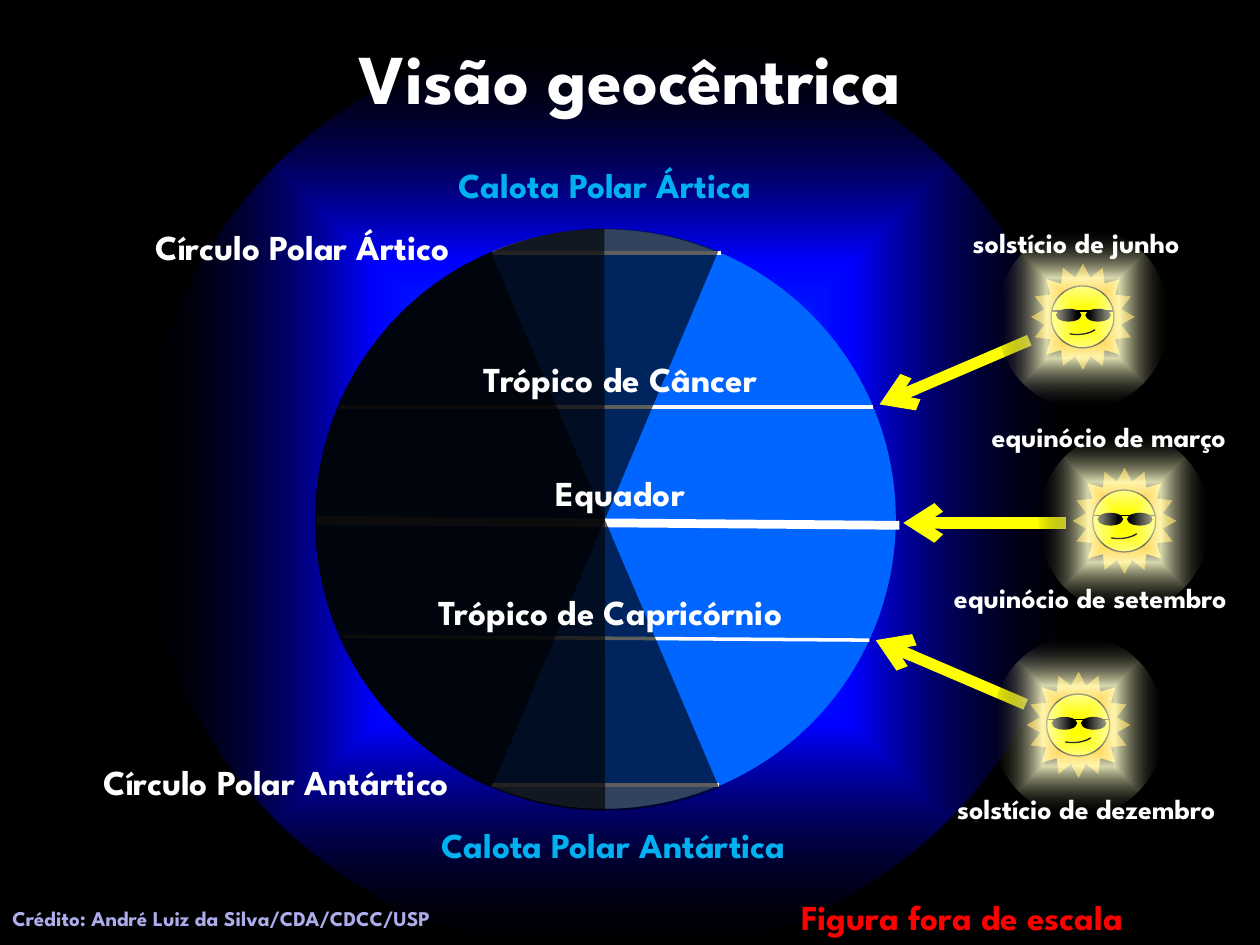
from dataclasses import dataclass
from typing import Any

import pptx
import pptx.dml.color
import pptx.enum.shapes
import pptx.enum.text
import pptx.oxml
import pptx.oxml.ns
import pptx.util
from lxml import etree

Pt = pptx.util.Pt
Kind = pptx.enum.shapes.MSO_SHAPE
Align = pptx.enum.text.PP_ALIGN
qn = pptx.oxml.ns.qn
WHITE, BLACK, BLUE, YELLOW = "FFFFFF", "000000", "0066FF", "FFFF00"
CYAN = "00B0F0"
FACE = "League Spartan"


@dataclass
class Label:
    text: str
    left: float
    top: float
    width: float
    size: int = 20
    tone: str = WHITE
    align: Any = Align.CENTER


@dataclass
class Form:
    kind: Any
    left: float
    top: float
    width: float
    height: float
    tone: str = ""
    alpha: int = 100
    stops: tuple = ()
    edge: float = 0
    turn: float = 0
    flip: bool = False
    bends: tuple = ()


@dataclass
class Stroke:
    start: tuple
    end: tuple
    width: float
    tone: str = WHITE
    head: bool = False


def color(tone: str) -> pptx.dml.color.RGBColor:
    return pptx.dml.color.RGBColor.from_string(tone)


def apply(target: Any, values: dict) -> None:
    for key, value in values.items():
        setattr(target, key, value)


def fade(node: Any, alpha: int) -> None:
    etree.SubElement(node, qn("a:alpha"), val=str(alpha * 1000))


def blend(shape: Any, stops: tuple) -> None:
    shape.fill.background()
    props = shape._element.spPr
    grad = etree.Element(qn("a:gradFill"), rotWithShape="1")
    group = etree.SubElement(grad, qn("a:gsLst"))
    for place, tone, alpha in stops:
        stop = etree.SubElement(group, qn("a:gs"), pos=str(place * 1000))
        fade(etree.SubElement(stop, qn("a:srgbClr"), val=str(color(tone))), alpha)
    route = etree.SubElement(grad, qn("a:path"), attrib={"path": "shape"})
    etree.SubElement(route, qn("a:fillToRect"), l="50000", t="50000", r="50000", b="50000")
    props.replace(props.find(qn("a:noFill")), grad)


def rim(shape: Any, width: float) -> None:
    if width:
        shape.line.color.rgb = color(BLACK)
        shape.line.width = Pt(width)
    else:
        shape.line.fill.background()


def draw(tree: Any, form: Form) -> None:
    box = map(Pt, (form.left, form.top, form.width, form.height))
    shape = tree.add_shape(form.kind, *box)
    shape.shadow.inherit = False
    shape.rotation = form.turn
    for spot, bend in enumerate(form.bends):
        shape.adjustments[spot] = bend
    if form.stops:
        blend(shape, form.stops)
    else:
        shape.fill.solid()
        shape.fill.fore_color.rgb = color(form.tone)
        if form.alpha < 100:
            fade(shape._element.spPr.find(qn("a:solidFill"))[0], form.alpha)
    rim(shape, form.edge)
    if form.flip:
        shape._element.spPr.xfrm.set("flipH", "1")


def rule(tree: Any, item: Stroke) -> None:
    ends = map(Pt, item.start + item.end)
    line = tree.add_connector(pptx.enum.shapes.MSO_CONNECTOR.STRAIGHT, *ends)
    line.line.color.rgb = color(item.tone)
    line.line.width = Pt(item.width)
    if item.head:
        etree.SubElement(line.line._get_or_add_ln(), qn("a:tailEnd"), type="arrow")
    etree.SubElement(line._element.spPr, qn("a:effectLst"))


def style(para: Any, size: int, tone: str, align: Any) -> None:
    para.alignment = align
    apply(para.font, {"name": FACE, "size": Pt(size), "bold": True})
    para.font.color.rgb = color(tone)


def write(tree: Any, label: Label) -> None:
    high = label.size * 1.2 + 7.2
    box = tree.add_textbox(*map(Pt, (label.left, label.top, label.width, high)))
    apply(box.text_frame, {
        "text": label.text,
        "word_wrap": True,
        "auto_size": pptx.enum.text.MSO_AUTO_SIZE.SHAPE_TO_FIT_TEXT,
    })
    style(box.text_frame.paragraphs[0], label.size, label.tone, label.align)


def smile(tree: Any, left: float, top: float) -> None:
    knots = ((0, 2), (5.2, 2.9), (10.8, 2.2), (14.6, -0.4))
    points = []
    for step in range(13):
        t = step / 12
        parts = ((1 - t) ** 3, 3 * t * (1 - t) ** 2, 3 * t * t * (1 - t), t ** 3)
        x, y = (sum(p * k[axis] for p, k in zip(parts, knots)) for axis in (0, 1))
        points.append((Pt(left + x), Pt(top + y)))
    pen = tree.build_freeform(*points[0])
    pen.add_line_segments(points[1:], close=False)
    shape = pen.convert_to_shape()
    shape.shadow.inherit = False
    shape.fill.background()
    rim(shape, 0.75)


def sun(shapes: Any, left: float, top: float) -> None:
    tree = shapes.add_group_shape().shapes
    draw(tree, Form(Kind.STAR_16_POINT, left, top, 61.2, 62.6, "FFC000", edge=0.75, bends=(0.375,)))
    draw(tree, Form(Kind.OVAL, left + 12.4, top + 13.6, 36, 35.4, YELLOW, edge=0.75))
    smile(tree, left + 23, top + 39)
    for shift in (15.6, 32.4):
        draw(tree, Form(Kind.OVAL, left + shift, top + 27, 13.8, 6.6, BLACK, edge=0.75))
    level = top + 28
    rule(tree, Stroke((left + 12.4, level), (left + 48.4, level), 0.75, BLACK))
    glow = ((7, WHITE, 0), (42, "FFFFCC", 85), (100, BLACK, 2))
    draw(tree, Form(Kind.OVAL, left - 18.7, top - 19.6, 98.6, 103, stops=glow))


def night(tree: Any, turn: float) -> None:
    draw(tree, Form(Kind.CHORD, 180.2, 130.6, 331.2, 332.6, BLACK, 63,
                    turn=turn, flip=True, bends=(54.09, 162.02)))


HALO = ((0, BLUE, 100), (50, "0000FF", 100), (100, BLACK, 5))
RINGS = (
    Stroke((180.7, 297.4), (514, 300.2), 5),
    Stroke((194.4, 232.6), (499, 232.6), 2),
    Stroke((195.8, 363.6), (496.8, 365.8), 2),
    Stroke((281.5, 144.7), (411.8, 144.7), 2),
    Stroke((280.8, 448.6), (411.1, 448.6), 2),
)
RAYS = (
    Stroke((609.1, 298.8), (516.2, 298.8), 6.5, YELLOW, True),
    Stroke((588.2, 194.4), (502.6, 231.1), 6.5, YELLOW, True),
    Stroke((586.1, 402.5), (500.4, 365.8), 6.5, YELLOW, True),
)
POLES = (
    Label("Círculo Polar Ártico", 8.6, 125.3, 329),
    Label("Círculo Polar Antártico", -6.5, 431.3, 329),
    Label("Calota Polar Antártica", 223.2, 467.3, 254.9, tone=CYAN),
    Label("Calota Polar Ártica", 218.2, 90, 254.9, tone=CYAN),
)
NOTES = (
    Label("Trópico de Câncer", 190.1, 200.9, 329),
    Label("Trópico de Capricórnio", 184.3, 334.1, 329),
    Label("Equador", 190.1, 265.7, 329),
    Label("Figura fora de escala", 450.7, 508.3, 254.9, tone="FF0000", align=Align.LEFT),
    Label("solstício de junho", 518.4, 125.3, 193, 16),
    Label("solstício de dezembro", 524.2, 448.6, 193, 16),
    Label("equinócio de março", 544.3, 236.2, 178.6, 16),
    Label("equinócio de setembro", 523.4, 328.3, 199.4, 16),
    Label("Crédito: André Luiz da Silva/CDA/CDCC/USP", 0, 514.1, 740.2, 12, "ADADEB", Align.LEFT),
)


def main() -> None:
    deck = pptx.Presentation()
    apply(deck, {"slide_width": Pt(720), "slide_height": Pt(540)})
    slide = deck.slides.add_slide(deck.slide_layouts[5])
    slide.background.fill.solid()
    slide.background.fill.fore_color.rgb = color(BLACK)
    tree = slide.shapes
    draw(tree, Form(Kind.OVAL, 79.9, 15.8, 540, 532, stops=HALO))
    draw(tree, Form(Kind.OVAL, 180.7, 131, 331.2, 331.2, BLUE))
    for ring in RINGS:
        rule(tree, ring)
    for turn in (0, 180):
        draw(tree, Form(Kind.CHORD, 179.3, 131, 331.2, 331.2, WHITE, 53,
                        turn=turn, bends=(40.23, 67.78)))
    for label in POLES:
        write(tree, label)
    for ray in RAYS:
        rule(tree, ray)
    sun(tree, 588.2, 149.8)
    sun(tree, 612, 266.4)
    night(tree, 180)
    sun(tree, 585.7, 383)
    for turn in (157, 203):
        night(tree, turn)
    for label in NOTES:
        write(tree, label)
    title = tree.title
    apply(title, {"left": 0, "top": Pt(-1.4), "width": Pt(720), "height": Pt(90)})
    apply(title.text_frame, {
        "text": "Visão geocêntrica",
        "vertical_anchor": pptx.enum.text.MSO_ANCHOR.MIDDLE,
    })
    style(title.text_frame.paragraphs[0], 40, WHITE, Align.CENTER)
    tree._spTree.append(title._element)
    deck.save("out.pptx")


if __name__ == "__main__":
    main()
